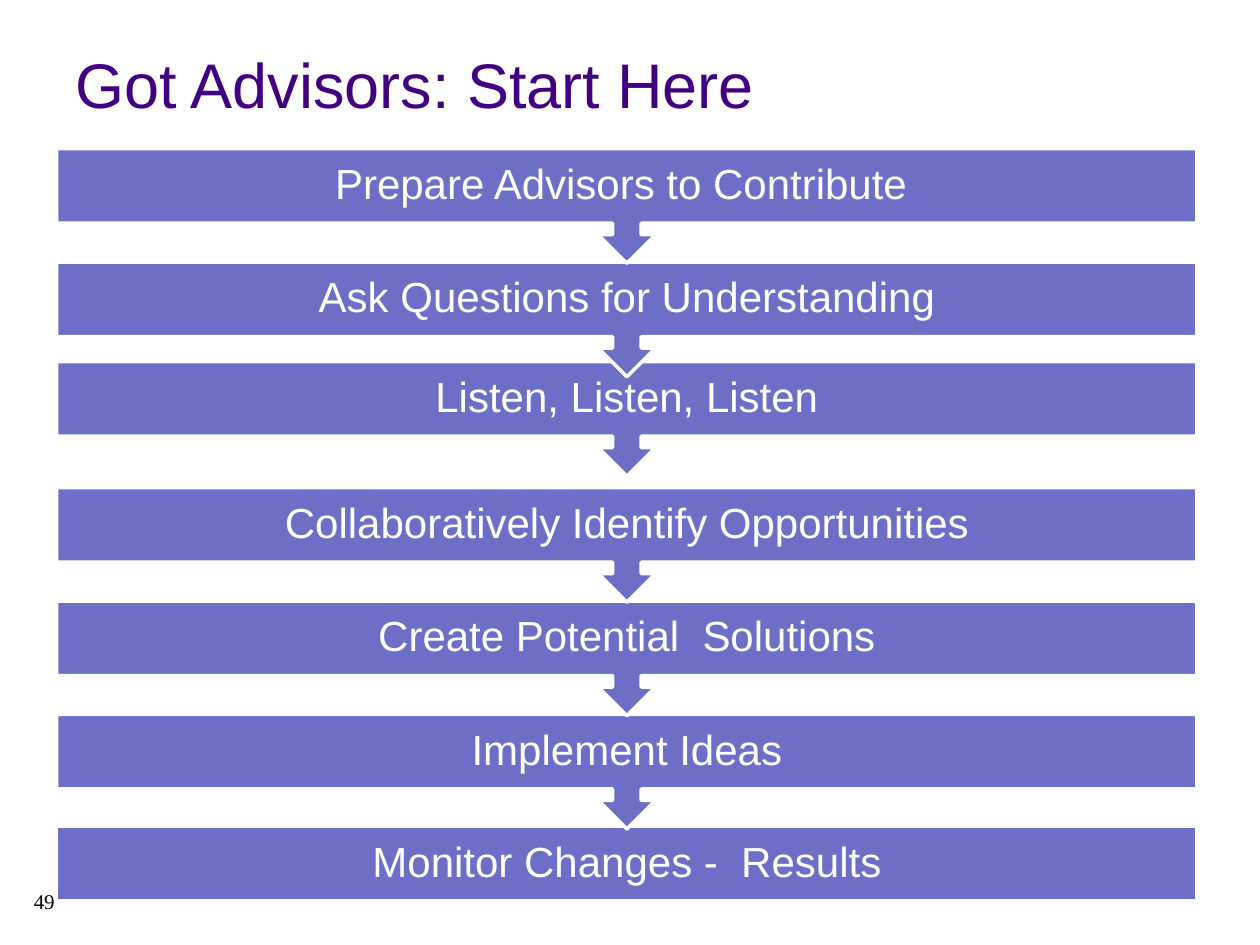
from pptx import Presentation
from pptx.dml.color import RGBColor
from pptx.enum import shapes, text
from pptx.util import Inches, Pt

TITLE = "Got Advisors: Start Here"
PAGE_NUMBER = "49"
STEPS = [
    ("Prepare Advisors to Contribute ", 1.18),
    ("Ask Questions for Understanding", 2.08),
    ("Listen, Listen, Listen", 2.87),
    ("Collaboratively Identify Opportunities", 3.87),
    ("Create Potential  Solutions", 4.77),
    ("Implement Ideas", 5.67),
    ("Monitor Changes -  Results", 6.56),
]

PERIWINKLE = RGBColor(0x6D, 0x6F, 0xC7)
PURPLE = RGBColor(0x40, 0x00, 0x80)
WHITE = RGBColor(0xFF, 0xFF, 0xFF)
BLACK = RGBColor(0x00, 0x00, 0x00)

LEFT, WIDTH = 0.45, 9.05
BAR_HEIGHT, CALLOUT_HEIGHT = 0.59, 0.91


def add_label(page, area, words, size, color, font="Arial", spacing=1.0,
              align=text.PP_ALIGN.LEFT, anchor=text.MSO_ANCHOR.MIDDLE, inset=None):
    box = page.shapes.add_textbox(*map(Inches, area))
    frame = box.text_frame
    frame.word_wrap = True
    frame.vertical_anchor = anchor
    if inset is not None:
        frame.margin_left = frame.margin_right = Inches(inset)
        frame.margin_top = frame.margin_bottom = Inches(inset)
    para = frame.paragraphs[0]
    para.alignment = align
    para.line_spacing = spacing
    span = para.add_run()
    span.text = words
    span.font.size = Pt(size)
    span.font.name = font
    span.font.color.rgb = color


def add_step(page, words, top, is_last):
    kind = shapes.MSO_SHAPE.RECTANGLE if is_last else shapes.MSO_SHAPE.UP_ARROW_CALLOUT
    height = BAR_HEIGHT if is_last else CALLOUT_HEIGHT
    bar = page.shapes.add_shape(kind, *map(Inches, (LEFT, top, WIDTH, height)))
    bar.rotation = 0 if is_last else 180
    bar.shadow.inherit = False
    bar.fill.solid()
    bar.fill.fore_color.rgb = PERIWINKLE
    bar.line.color.rgb = WHITE
    bar.line.width = Pt(2)
    add_label(page, (LEFT, top, WIDTH, BAR_HEIGHT), words, 24, WHITE,
              spacing=0.9, align=text.PP_ALIGN.CENTER, inset=0.19)


def main():
    deck = Presentation()
    deck.slide_width, deck.slide_height = Inches(10), Inches(7.5)
    page = deck.slides.add_slide(deck.slide_layouts[6])
    page.background.fill.solid()
    page.background.fill.fore_color.rgb = WHITE

    for index, (words, top) in reversed(list(enumerate(STEPS))):
        add_step(page, words, top, index == len(STEPS) - 1)

    add_label(page, (0.5, 0.15, 9, 1.12), TITLE, 36, PURPLE, spacing=0.85)
    add_label(page, (0.17, 7, 2.33, 0.4), PAGE_NUMBER, 12, BLACK,
              font="Times New Roman", anchor=text.MSO_ANCHOR.TOP)
    deck.save("out.pptx")


if __name__ == "__main__":
    main()
